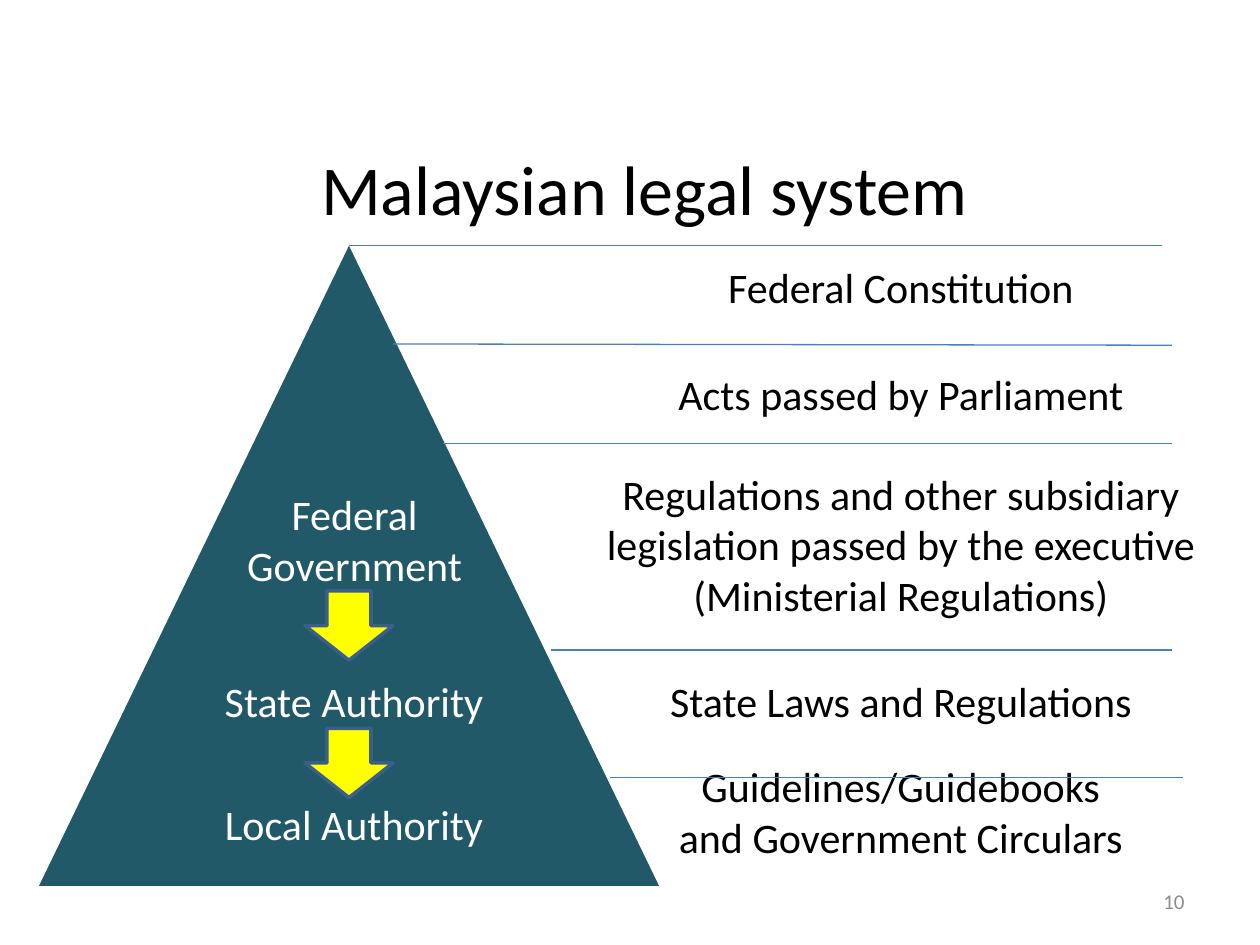
from lxml import etree
from pptx import Presentation
from pptx.dml.color import RGBColor
from pptx.enum import shapes, text
from pptx.oxml.ns import qn
from pptx.util import Inches, Pt

FONT = "Calibri"
RULE_COLOR = "4B7EBC"
LEVELS = [
    ("Federal Constitution", 0),
    ("Acts passed by Parliament", 32),
    ("Regulations and other subsidiary legislation passed by the executive "
     "(Ministerial Regulations)", 28.4),
    ("State Laws and Regulations", 32),
    ("Guidelines/Guidebooks", 19.8),
    ("and Government Circulars", 0),
]
AUTHORITIES = [
    (("Federal", "Government"), (1.8, 3.83, 2.03, 0.91)),
    (("State Authority",), (1.48, 5.31, 2.66, 0.5)),
    (("Local Authority",), (1.48, 6.29, 2.66, 0.5)),
]
RULES = [
    ((2.77, 1.95), (9.22, 1.95)),
    ((3.12, 2.73), (9.3, 2.74)),
    ((3.52, 3.52), (9.3, 3.52)),
    ((4.37, 5.16), (9.3, 5.16)),
    ((4.84, 6.17), (9.39, 6.17)),
]
ARROW_TOPS = [4.69, 5.78]


def rgb(color):
    return RGBColor.from_string(color)


def add_text(slide, box, lines, size=24, color="000000",
             align=text.PP_ALIGN.CENTER, anchor=text.MSO_ANCHOR.TOP, gaps=()):
    frame = slide.shapes.add_textbox(*map(Inches, box)).text_frame
    frame.word_wrap = True
    frame.vertical_anchor = anchor
    frame.text = "\n".join(lines)
    for paragraph in frame.paragraphs:
        paragraph.alignment = align
        for run in paragraph.runs:
            run.font.name = FONT
            run.font.size = Pt(size)
            run.font.color.rgb = rgb(color)
    for paragraph, gap in zip(frame.paragraphs, gaps):
        paragraph.space_before = Pt(gap)


def add_figure(slide, preset, box, fill, outline=None):
    figure = slide.shapes.add_shape(preset, *map(Inches, box))
    figure.shadow.inherit = False
    figure.fill.solid()
    figure.fill.fore_color.rgb = rgb(fill)
    if outline:
        figure.line.color.rgb = rgb(outline)
        figure.line.width = Pt(2)
    else:
        figure.line.fill.background()


def add_rule(slide, start, end):
    rule = slide.shapes.add_connector(
        shapes.MSO_CONNECTOR.STRAIGHT, *map(Inches, start + end))
    rule.line.color.rgb = rgb(RULE_COLOR)
    rule.line.width = Pt(0.75)
    etree.SubElement(rule._element.spPr, qn("a:effectLst"))


def main():
    deck = Presentation()
    deck.slide_width, deck.slide_height = Inches(10), Inches(7.5)
    slide = deck.slides.add_slide(deck.slide_layouts[6])

    add_text(slide, (7.17, 6.95, 2.33, 0.4), ["10"], 12, "8C8C8C",
             text.PP_ALIGN.RIGHT, text.MSO_ANCHOR.MIDDLE)
    add_figure(slide, shapes.MSO_SHAPE.ISOSCELES_TRIANGLE,
               (0.31, 1.95, 4.92, 5.08), "215968")
    add_text(slide, (0.23, 0.86, 9.77, 1.25), ["Malaysian legal system"], 40,
             anchor=text.MSO_ANCHOR.MIDDLE)

    levels, gaps = zip(*LEVELS)
    add_text(slide, (4.3, 2.03, 5.7, 5.1), levels, gaps=gaps)
    for start, end in RULES:
        add_rule(slide, start, end)
    for lines, box in AUTHORITIES:
        add_text(slide, box, lines, color="FFFFFF")
    for top in ARROW_TOPS:
        add_figure(slide, shapes.MSO_SHAPE.DOWN_ARROW,
                   (2.42, top, 0.7, 0.55), "FFFF00", "3A5F8C")

    deck.save("out.pptx")


if __name__ == "__main__":
    main()
